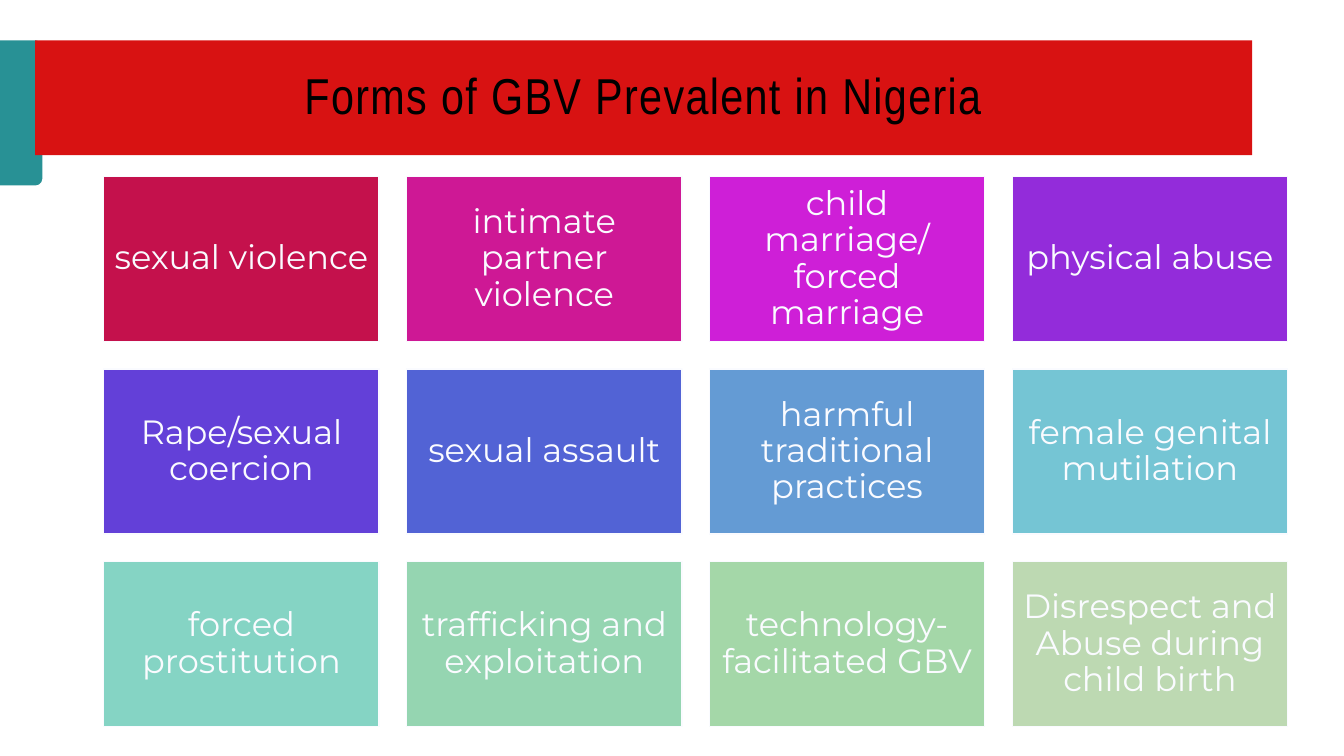
from pptx import Presentation
from pptx.dml.color import RGBColor
from pptx.enum.shapes import MSO_SHAPE
from pptx.enum.text import MSO_ANCHOR, PP_ALIGN
from pptx.util import Pt

PX = 9144  # EMU per px, 100 px to the inch
RECT, TAB = MSO_SHAPE.RECTANGLE, MSO_SHAPE.ROUND_2_SAME_RECTANGLE
MIDDLE, CENTER = MSO_ANCHOR.MIDDLE, PP_ALIGN.CENTER

COLORS = {"tab": "289195", "banner": "D81212", "title": "000000", "light": "FAFBFF"}
TITLE_FONT = {"name": "Arial Narrow", "size": Pt(36)}
CARD_FONT = {"name": "Montserrat", "size": Pt(24)}

COLUMNS, CARD_W, CARD_H = 4, 273, 164
FORMS = [
    ("sexual violence", "C4114C"),
    ("intimate partner violence", "CE1895"),
    ("child marriage/ forced marriage", "CE1FD7"),
    ("physical abuse", "932CDA"),
    ("Rape/sexual coercion", "6340D8"),
    ("sexual assault", "5263D5"),
    ("harmful traditional practices", "649BD4"),
    ("female genital mutilation", "75C5D4"),
    ("forced prostitution", "85D4C4"),
    ("trafficking and exploitation", "95D5B1"),
    ("technology-facilitated GBV", "A4D7A8"),
    ("Disrespect and Abuse during child birth", "BDD9B2"),
]


def rgb(color):
    return RGBColor.from_string(color)


def add_box(slide, kind, x, y, w, h, fill):
    sp = slide.shapes.add_shape(kind, *(round(v * PX) for v in (x, y, w, h)))
    sp.shadow.inherit = False
    sp.fill.solid()
    sp.fill.fore_color.rgb = rgb(fill)
    sp.line.fill.background()
    return sp


def write(sp, text, font, color, inset=10):
    tf = sp.text_frame
    tf.word_wrap = True
    tf.vertical_anchor = MIDDLE
    for side in ("left", "top", "right", "bottom"):
        setattr(tf, f"margin_{side}", inset * PX)
    p = tf.paragraphs[0]
    p.alignment = CENTER
    p.line_spacing = 0.9
    r = p.add_run()
    r.text = text
    for name, value in font.items():
        setattr(r.font, name, value)
    r.font.color.rgb = rgb(color)
    return r


def add_header(slide, x, y, w, h):
    # Side tab, turned so that its rounded end faces right
    length, depth = 144, 42
    tab = add_box(slide, TAB, (depth - length) / 2, y + (length - depth) / 2,
                  length, depth, COLORS["tab"])
    tab.rotation = 90
    # Title banner
    banner = add_box(slide, RECT, x, y, w, h, COLORS["banner"])
    r = write(banner, "Forms of GBV Prevalent in Nigeria", TITLE_FONT, COLORS["title"])
    r._r.get_or_add_rPr().set("spc", "100")


def add_cards(slide, x, y, w, h):
    rows = len(FORMS) // COLUMNS
    step_x = (w - CARD_W) / (COLUMNS - 1)
    step_y = (h - CARD_H) / (rows - 1)
    for i, (text, fill) in enumerate(FORMS):
        row, col = divmod(i, COLUMNS)
        card = add_box(slide, RECT, x + col * step_x, y + row * step_y,
                       CARD_W, CARD_H, fill)
        card.line.color.rgb = rgb(COLORS["light"])
        card.line.width = Pt(1)
        write(card, text, CARD_FONT, COLORS["light"])


def main():
    prs = Presentation()
    prs.slide_width, prs.slide_height = 1333 * PX, 750 * PX
    slide = prs.slides.add_slide(prs.slide_layouts[6])
    add_header(slide, 35, 40, 1207, 114)
    add_cards(slide, 103, 175, 1174, 546)
    prs.save("out.pptx")


if __name__ == "__main__":
    main()
